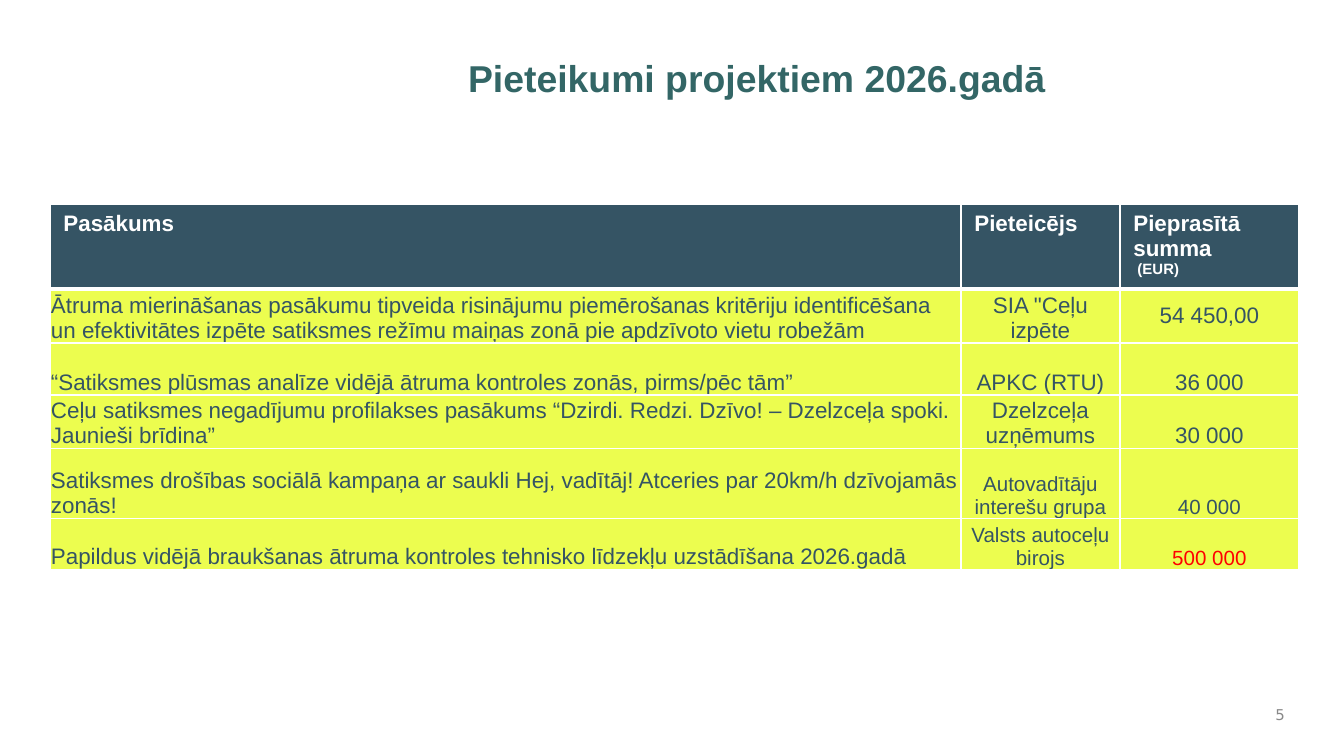
from lxml.etree import SubElement
from pptx import Presentation
from pptx.dml.color import RGBColor
from pptx.enum.text import MSO_ANCHOR, PP_ALIGN
from pptx.oxml.ns import qn
from pptx.util import Emu, Pt

COLORS = {
    "title": "336666",
    "slate": "355464",
    "lime": "ECFD4F",
    "white": "FFFFFF",
    "red": "FF0000",
    "gray": "898989",
}
COLUMN_WIDTHS = [911, 159, 179]
ROW_HEIGHTS = [82, 51, 52, 51, 70, 51]
HEADERS = ["Pasākums", "Pieteicējs", "Pieprasītā summa"]
PROJECTS = [
    ("Ātruma mierināšanas pasākumu tipveida risinājumu piemērošanas kritēriju identificēšana "
     "un efektivitātes izpēte satiksmes režīmu maiņas zonā pie apdzīvoto vietu robežām",
     'SIA "Ceļu izpēte', "54 450,00"),
    ("“Satiksmes plūsmas analīze vidējā ātruma kontroles zonās, pirms/pēc tām”",
     "APKC (RTU)", "36 000"),
    ("Ceļu satiksmes negadījumu profilakses pasākums “Dzirdi. Redzi. Dzīvo! – Dzelzceļa spoki. "
     "Jaunieši brīdina”",
     "Dzelzceļa uzņēmums", "30 000"),
    ("Satiksmes drošības sociālā kampaņa ar saukli Hej, vadītāj! Atceries par 20km/h "
     "dzīvojamās zonās!",
     "Autovadītāju interešu grupa", "40 000"),
    ("Papildus vidējā braukšanas ātruma kontroles tehnisko līdzekļu uzstādīšana 2026.gadā",
     "Valsts autoceļu birojs", "500 000"),
]


def px(length):
    return Emu(round(length * 914400 / 134.4))


def write(paragraph, text, size=12, color="slate", bold=False, font="Arial", align=PP_ALIGN.LEFT):
    paragraph.alignment = align
    run = paragraph.add_run()
    run.text = text
    run.font.name = font
    run.font.size = Pt(size)
    run.font.bold = bold
    run.font.color.rgb = RGBColor.from_string(COLORS[color])


class SlideBuilder:
    def __init__(self, presentation):
        self.slide = presentation.slides.add_slide(presentation.slide_layouts[5])

    def title(self, text, left, top, width, height):
        shape = self.slide.shapes.title
        shape.left, shape.top, shape.width, shape.height = map(px, (left, top, width, height))
        shape.text_frame.vertical_anchor = MSO_ANCHOR.TOP
        write(shape.text_frame.paragraphs[0], text, size=20, color="title", bold=True,
              align=PP_ALIGN.CENTER)

    def page_number(self, text, left, top, width, height):
        shape = self.slide.shapes.add_textbox(*map(px, (left, top, width, height)))
        shape.text_frame.word_wrap = True
        shape.text_frame.vertical_anchor = MSO_ANCHOR.MIDDLE
        write(shape.text_frame.paragraphs[0], text, size=8, color="gray", font="DejaVu Sans",
              align=PP_ALIGN.RIGHT)

    def table(self, left, top, column_widths, row_heights):
        frame = self.slide.shapes.add_table(
            len(row_heights), len(column_widths), px(left), px(top),
            px(sum(column_widths)), px(sum(row_heights)))
        table = frame.table
        table.horz_banding = False
        for column, width in zip(table.columns, column_widths):
            column.width = px(width)
        for row, height in zip(table.rows, row_heights):
            row.height = px(height)
        return table

    def cell_style(self, cell, fill, borders):
        properties = cell._tc.get_or_add_tcPr()
        for side, width in borders.items():
            line = SubElement(properties, qn(f"a:ln{side}"), w=str(Pt(width)))
            solid = SubElement(line, qn("a:solidFill"))
            SubElement(solid, qn("a:srgbClr"), val=COLORS["white"])
        cell.fill.solid()
        cell.fill.fore_color.rgb = RGBColor.from_string(COLORS[fill])

    def header_cell(self, cell, text):
        self.cell_style(cell, "slate", {"B": 2})
        write(cell.text_frame.paragraphs[0], text, color="white", bold=True)

    def body_cell(self, cell, text, anchor=MSO_ANCHOR.BOTTOM, **text_format):
        self.cell_style(cell, "lime", {"L": 1, "R": 1, "B": 1})
        cell.margin_left = cell.margin_right = px(1)
        cell.margin_top = cell.margin_bottom = 0
        cell.vertical_anchor = anchor
        write(cell.text_frame.paragraphs[0], text, **text_format)


def main():
    presentation = Presentation()
    presentation.slide_width, presentation.slide_height = px(1344), px(756)
    builder = SlideBuilder(presentation)
    builder.page_number("5", 1254, 698, 44, 34)
    table = builder.table(50, 204, COLUMN_WIDTHS, ROW_HEIGHTS)
    for column, text in enumerate(HEADERS):
        builder.header_cell(table.cell(0, column), text)
    write(table.cell(0, 2).text_frame.add_paragraph(), " (EUR)", size=8, color="white", bold=True)
    for row, (activity, applicant, amount) in enumerate(PROJECTS, start=1):
        size = 11 if row >= 4 else 12
        builder.body_cell(table.cell(row, 0), activity)
        builder.body_cell(table.cell(row, 1), applicant, size=size, align=PP_ALIGN.CENTER)
        builder.body_cell(
            table.cell(row, 2), amount, size=size, align=PP_ALIGN.CENTER,
            anchor=MSO_ANCHOR.MIDDLE if row == 1 else MSO_ANCHOR.BOTTOM,
            color="red" if row == len(PROJECTS) else "slate")
    builder.title("Pieteikumi projektiem 2026.gadā", 309, 48, 896, 78)
    presentation.save("out.pptx")


if __name__ == "__main__":
    main()
